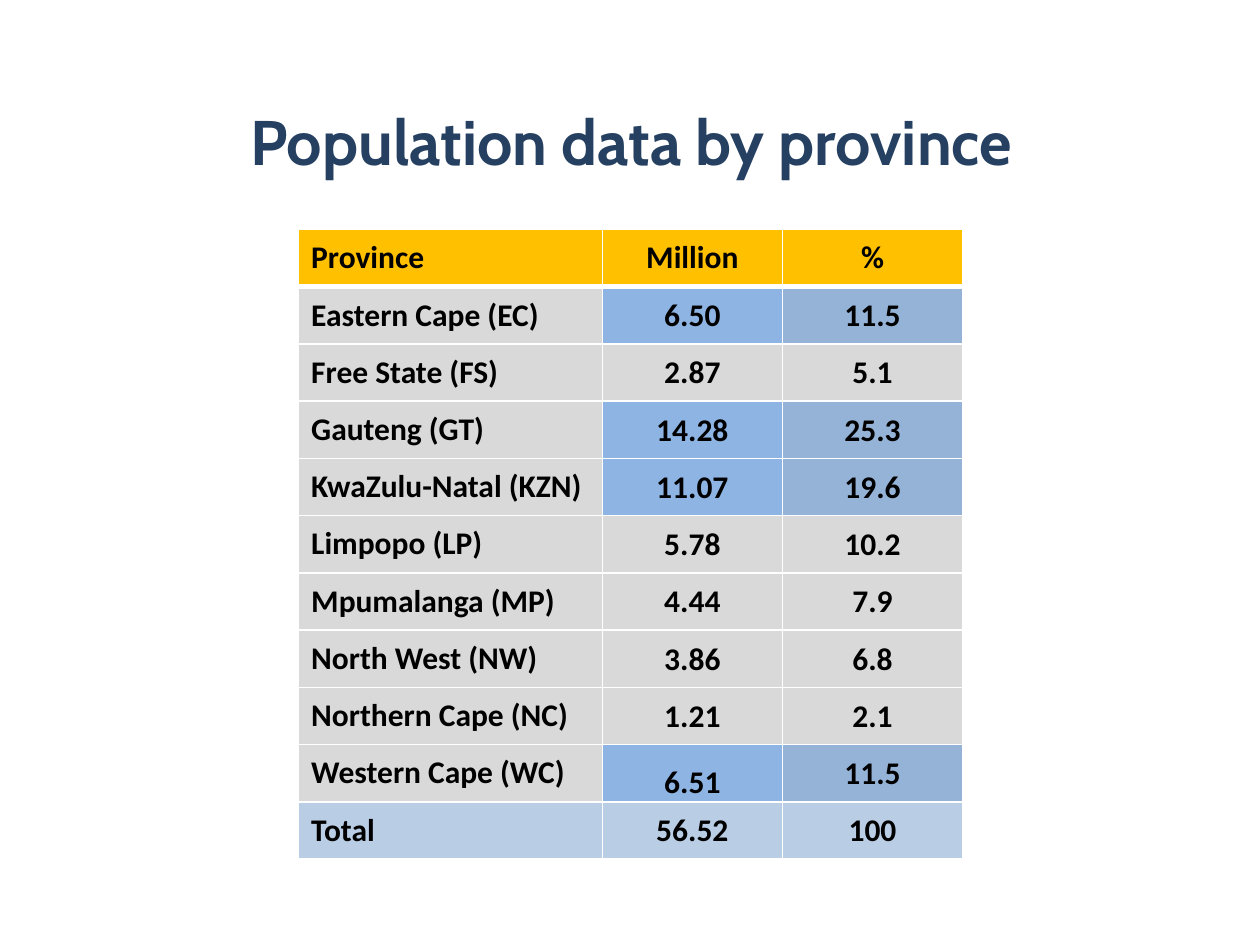
from dataclasses import dataclass

from lxml import etree
from pptx import Presentation
from pptx import util as u
from pptx.dml.color import RGBColor
from pptx.enum import text
from pptx.oxml import ns

NAVY = RGBColor(0x25, 0x40, 0x61)
BLACK = RGBColor(0, 0, 0)
WHITE = RGBColor(0xFF, 0xFF, 0xFF)
GOLD = RGBColor(0xFF, 0xC0, 0x00)
GREY = RGBColor(0xD9, 0xD9, 0xD9)
SKY = RGBColor(0x8E, 0xB4, 0xE3)
STEEL = RGBColor(0x95, 0xB3, 0xD7)
PALE = RGBColor(0xB9, 0xCD, 0xE5)

PLAIN = (GREY, GREY, GREY)
HIGHLIGHT = (GREY, SKY, STEEL)
COL_WIDTHS = (2.41, 1.43, 1.43)
TABLE_HEIGHT = 5


@dataclass
class Row:
    province: str
    million: str
    percent: str
    fills: tuple[RGBColor, ...] = PLAIN
    header: bool = False
    million_anchor: text.MSO_ANCHOR = text.MSO_ANCHOR.MIDDLE


ROWS = [
    Row("Province", "Million", "%", (GOLD,) * 3, header=True),
    Row("Eastern Cape (EC)", "6.50", "11.5", HIGHLIGHT),
    Row("Free State (FS)", "2.87", "5.1"),
    Row("Gauteng (GT)", "14.28", "25.3", HIGHLIGHT),
    Row("KwaZulu-Natal (KZN)", "11.07", "19.6", HIGHLIGHT),
    Row("Limpopo (LP)", "5.78", "10.2"),
    Row("Mpumalanga (MP)", "4.44", "7.9"),
    Row("North West (NW)", "3.86", "6.8"),
    Row("Northern Cape (NC)", "1.21", "2.1"),
    Row("Western Cape (WC)", "6.51", "11.5", HIGHLIGHT,
        million_anchor=text.MSO_ANCHOR.BOTTOM),
    Row("Total", "56.52", "100", (PALE,) * 3),
]


def set_borders(cell, top: float, bottom: float) -> None:
    """Give a cell white borders, with widths in points."""
    tc_pr = cell._tc.get_or_add_tcPr()
    for side, width in (("L", 1), ("R", 1), ("T", top), ("B", bottom)):
        ln = etree.SubElement(tc_pr, ns.qn(f"a:ln{side}"), w=str(u.Pt(width)))
        fill = etree.SubElement(ln, ns.qn("a:solidFill"))
        etree.SubElement(fill, ns.qn("a:srgbClr"), val=str(WHITE))


def fill_row(table, index: int, row: Row) -> None:
    """Write and format one table row."""
    values = (row.province, row.million, row.percent)
    for col, (value, color) in enumerate(zip(values, row.fills)):
        cell = table.cell(index, col)
        set_borders(cell, top=3 if index == 1 else 1,
                    bottom=3 if row.header else 1)
        cell.fill.solid()
        cell.fill.fore_color.rgb = color
        cell.vertical_anchor = (row.million_anchor if col == 1
                                else text.MSO_ANCHOR.MIDDLE)
        if col and not row.header:
            cell.margin_left = cell.margin_right = u.Inches(0.01)
            cell.margin_top, cell.margin_bottom = u.Inches(0.01), 0
        p = cell.text_frame.paragraphs[0]
        p.text = value
        p.alignment = text.PP_ALIGN.CENTER if col else text.PP_ALIGN.LEFT
        p.font.name, p.font.size, p.font.bold = "Calibri", u.Pt(18), True
        p.font.color.rgb = BLACK


def add_title(slide, title: str) -> None:
    """Place and format the title placeholder."""
    sp = slide.shapes.title
    sp.left, sp.top = u.Inches(0.51), u.Inches(0.68)
    sp.width, sp.height = u.Inches(9), u.Inches(0.87)
    tf = sp.text_frame
    tf.vertical_anchor = text.MSO_ANCHOR.MIDDLE
    p = tf.paragraphs[0]
    p.text = title
    p.alignment = text.PP_ALIGN.CENTER
    p.font.name, p.font.size, p.font.bold = "Cabin", u.Pt(36), True
    p.font.color.rgb = NAVY


def add_population_table(slide, rows: list[Row]) -> None:
    """Add the province table with equal row heights."""
    table = slide.shapes.add_table(
        len(rows), len(COL_WIDTHS), u.Inches(2.37), u.Inches(1.82),
        u.Inches(sum(COL_WIDTHS)), u.Inches(TABLE_HEIGHT)).table
    for column, width in zip(table.columns, COL_WIDTHS):
        column.width = u.Inches(width)
    for index, row in enumerate(rows):
        fill_row(table, index, row)


def main() -> None:
    prs = Presentation()
    prs.slide_width, prs.slide_height = u.Inches(10), u.Inches(7.5)
    slide = prs.slides.add_slide(prs.slide_layouts[5])  # title only
    add_title(slide, "Population data by province")
    add_population_table(slide, ROWS)
    prs.save("out.pptx")


if __name__ == "__main__":
    main()
